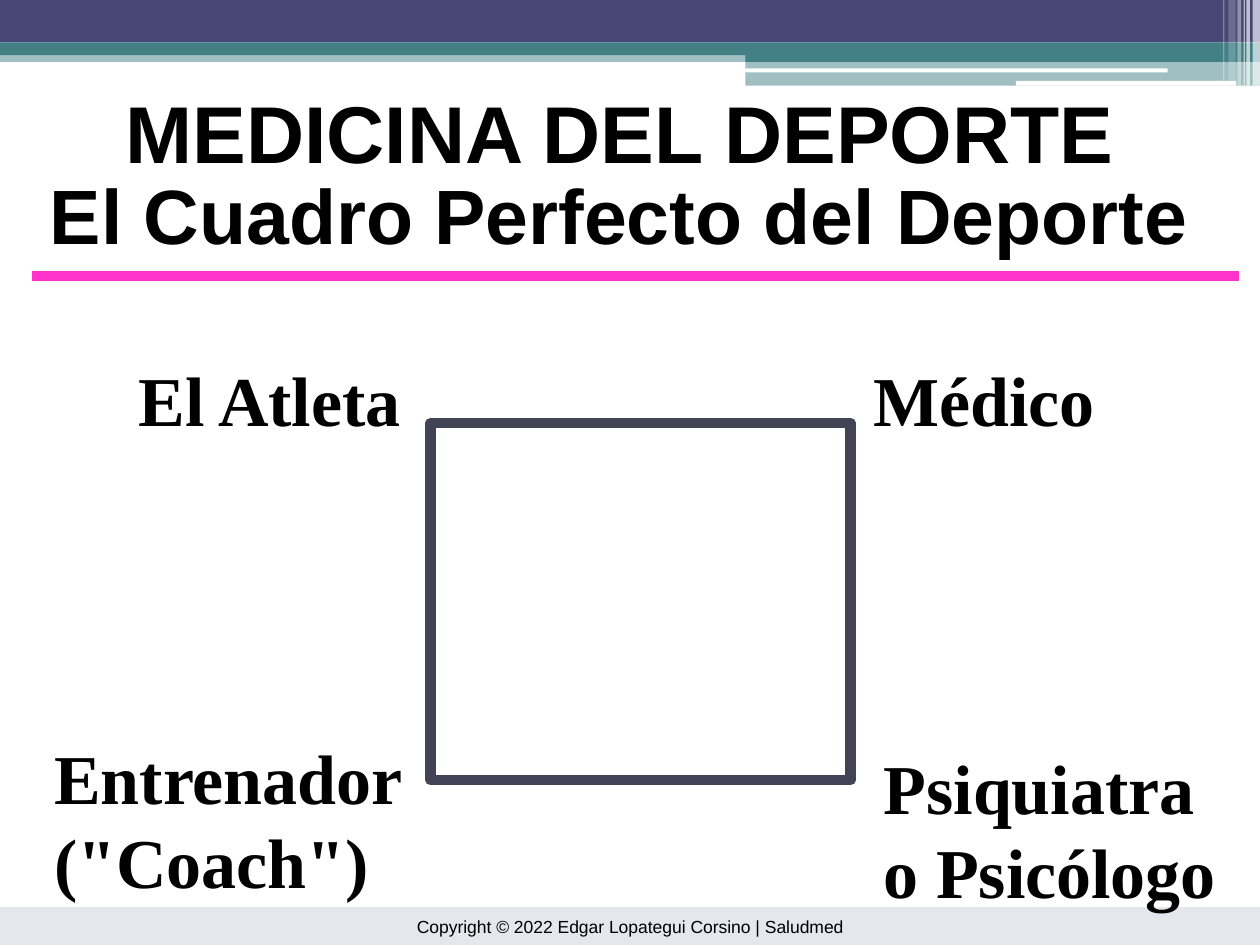
from dataclasses import dataclass

from lxml.etree import SubElement
from pptx import Presentation
from pptx.dml.color import RGBColor
from pptx.enum.shapes import MSO_CONNECTOR as Connector, MSO_SHAPE as Shape
from pptx.enum.text import MSO_ANCHOR as Anchor, PP_ALIGN as Align
from pptx.oxml.ns import qn
from pptx.util import Inches, Pt

COLUMNS, ROWS = 120, 90
WIDTH, HEIGHT = Inches(10), Inches(7.5)


@dataclass(frozen=True)
class Theme:
    """Colours, fonts and type sizes of the slide."""
    indigo: str = "484876"
    teal: str = "438086"
    white: str = "FFFFFF"
    black: str = "000000"
    lavender: str = "E6E6EF"
    pink: str = "FF33CC"
    slate: str = "424456"
    sans: str = "Arial"
    serif: str = "Times New Roman"
    title: int = 46
    subtitle: int = 44
    label: int = 40
    footer: int = 10
    stroke: int = 6


THEME = Theme()


def grid(left, top, width, height):
    """Turn grid columns and rows into slide lengths."""
    column, row = WIDTH / COLUMNS, HEIGHT / ROWS
    return [round(n) for n in (left * column, top * row, width * column, height * row)]


def add_block(slide, cells, color, opacity=100, kind=Shape.RECTANGLE):
    """Add a filled shape without an outline."""
    block = slide.shapes.add_shape(kind, *grid(*cells))
    block.shadow.inherit = False
    block.line.fill.background()
    block.fill.solid()
    block.fill.fore_color.rgb = RGBColor.from_string(color)
    if opacity < 100:
        solid = block.fill._xPr.find(qn("a:solidFill"))
        SubElement(solid[0], qn("a:alpha"), val=str(opacity * 1000))
    return block


def write(frame, lines, size, font, bold=True, align=Align.LEFT, anchor=Anchor.TOP):
    """Write each line as a paragraph of one run."""
    frame.word_wrap = True
    frame.vertical_anchor = anchor
    for index, line in enumerate(lines):
        paragraph = frame.add_paragraph() if index else frame.paragraphs[0]
        paragraph.alignment = align
        run = paragraph.add_run()
        run.text = line
        run.font.size, run.font.name, run.font.bold = Pt(size), font, bold
        run.font.color.rgb = RGBColor.from_string(THEME.black)


def add_header(slide):
    """Add the layered bands and the light strips in the corner."""
    add_block(slide, (0, 4.8, 120, 1.1), THEME.teal, 50)
    add_block(slide, (0, 0, 120, 4.05), THEME.indigo)
    add_block(slide, (0, 4.05, 120, 1.2), THEME.teal)
    add_block(slide, (71, 4.7, 49, 1.2), THEME.teal)
    add_block(slide, (71, 5.8, 49, 2.35), THEME.teal, 50)
    for bar in ((71, 6.5, 40.2, 0.4), (96.75, 7.7, 21, 0.45)):
        add_block(slide, bar, THEME.white, kind=Shape.ROUNDED_RECTANGLE)
    strips = ((119.3, 0.7, 8.15, 65), (118.7, 0.35, 8.15, 65), (118.45, 0.12, 8.15, 60),
              (117.85, 0.35, 8.15, 40), (117, 0.7, 7.7, 20), (116.5, 0.12, 7.7, 30))
    for left, width, height, opacity in strips:
        add_block(slide, (left, 0, width, height), THEME.white, opacity)


def add_footer(slide):
    """Add the copyright band."""
    band = add_block(slide, (0, 86.4, 120, 3.6), THEME.lavender)
    write(band.text_frame, ["Copyright © 2022 Edgar Lopategui Corsino | Saludmed"],
          THEME.footer, THEME.sans, False, Align.CENTER, Anchor.MIDDLE)


def add_heading(slide):
    """Fill the title, add the second heading line and the rule."""
    title = slide.shapes.title
    title.left, title.top, title.width, title.height = grid(1, 7.3, 116, 10.4)
    write(title.text_frame, ["MEDICINA DEL DEPORTE"], THEME.title, THEME.sans, align=Align.CENTER)
    subtitle = slide.shapes.add_textbox(*grid(1, 15.35, 116, 10))
    write(subtitle.text_frame, ["El Cuadro Perfecto del Deporte"],
          THEME.subtitle, THEME.sans, align=Align.CENTER)
    left, top, right, bottom = grid(3, 26.3, 118, 26.3)
    rule = slide.shapes.add_connector(Connector.STRAIGHT, left, top, right, bottom)
    rule.line.color.rgb = RGBColor.from_string(THEME.pink)
    rule.line.width = Pt(THEME.stroke)
    SubElement(rule._element.spPr, qn("a:effectLst"))


def add_square(slide):
    """Add the open frame that joins the four roles."""
    square = slide.shapes.add_shape(Shape.RECTANGLE, *grid(41, 40.3, 40, 34))
    square.shadow.inherit = False
    square.fill.background()
    square.line.color.rgb = RGBColor.from_string(THEME.slate)
    square.line.width = Pt(THEME.stroke)


def add_role(slide, cells, lines):
    """Add the name of a role at a corner of the frame."""
    role = slide.shapes.add_textbox(*grid(*cells))
    write(role.text_frame, lines, THEME.label, THEME.serif)


def main():
    """Build and save the slide."""
    deck = Presentation()
    deck.slide_width, deck.slide_height = WIDTH, HEIGHT
    slide = deck.slides.add_slide(deck.slide_layouts[5])
    add_header(slide)
    add_footer(slide)
    add_heading(slide)
    add_square(slide)
    add_role(slide, (12, 33.35, 32, 9.25), ["El Atleta"])
    add_role(slide, (4, 69.35, 36, 17.2), ["Entrenador", '("Coach")'])
    add_role(slide, (82, 33.35, 26, 9.25), ["Médico"])
    add_role(slide, (83, 70.35, 36, 17.2), ["Psiquiatra", "o Psicólogo"])
    deck.save("out.pptx")


if __name__ == "__main__":
    main()
